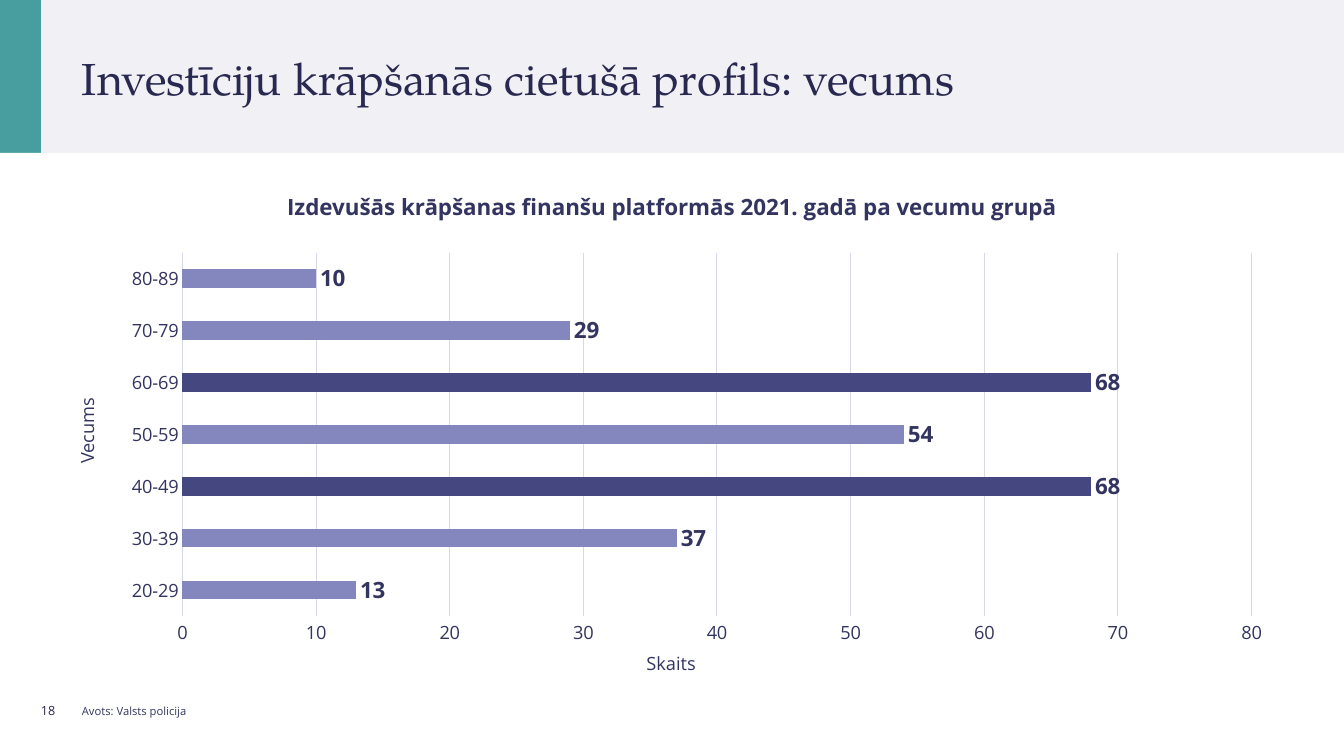
from lxml import etree
from pptx import Presentation
from pptx import util as u
from pptx.chart.data import CategoryChartData
from pptx.dml.color import RGBColor
from pptx.enum import chart as ch, shapes, text
from pptx.oxml.ns import qn

PX = 914400 / 100.8
SANS, SERIF = "Open Sans", "TeX Gyre Pagella"
INK, NAVY, TEAL = "333560", "282850", "489E9E"
BAR, BAR_TOP, GRID = "8487BE", "444780", "D6D7E9"
AGES = ["20-29", "30-39", "40-49", "50-59", "60-69", "70-79", "80-89"]
VICTIMS = [13, 37, 68, 54, 68, 29, 10]


def px(n):
    return u.Emu(round(n * PX))


def rgb(value):
    return RGBColor.from_string(value)


def set_font(font, size, color=INK, name=SANS, bold=False):
    font.size, font.name, font.bold = u.Pt(size), name, bold
    font.color.rgb = rgb(color)


def add_rect(slide, box, color):
    sp = slide.shapes.add_shape(shapes.MSO_SHAPE.RECTANGLE, *map(px, box))
    sp.shadow.inherit = False
    sp.fill.solid()
    sp.fill.fore_color.rgb = rgb(color)
    sp.line.fill.background()


def add_text(slide, box, content, size, color=INK, name=SANS, bold=False,
             align="LEFT", anchor="MIDDLE", rotation=0):
    sp = slide.shapes.add_textbox(*map(px, box))
    sp.rotation = rotation
    tf = sp.text_frame
    tf.word_wrap = True
    tf.vertical_anchor = text.MSO_ANCHOR[anchor]
    p = tf.paragraphs[0]
    p.alignment = text.PP_ALIGN[align]
    r = p.add_run()
    r.text = content
    set_font(r.font, size, color, name, bold)


def header(slide, x, y, w, h):
    # Accent block and slide title
    add_rect(slide, (x, y, 41, h), TEAL)
    add_text(slide, (x + 72, y + 20, w - 140, h - 37),
             "Investīciju krāpšanās cietušā profils: vecums", 32, NAVY, SERIF)


def set_plot_layout(chart, x, y, w, h):
    # Fixed inner plot area, as fractions of the chart
    area = chart._chartSpace.chart.plotArea
    for old in area.findall(qn("c:layout")):
        area.remove(old)
    layout = etree.Element(qn("c:layout"))
    manual = etree.SubElement(layout, qn("c:manualLayout"))
    for tag, val in (("layoutTarget", "inner"), ("xMode", "edge"), ("yMode", "edge"),
                     ("x", x), ("y", y), ("w", w), ("h", h)):
        etree.SubElement(manual, qn("c:" + tag)).set("val", str(val))
    area.insert(0, layout)


def age_chart(slide, x, y, w, h):
    data = CategoryChartData()
    data.categories = AGES
    data.add_series("Skaits", VICTIMS)
    chart = slide.shapes.add_chart(ch.XL_CHART_TYPE.BAR_CLUSTERED,
                                   px(x), px(y), px(w), px(h), data).chart
    set_font(chart.font, 13)
    chart.has_legend = chart.has_title = False
    set_plot_layout(chart, 0.067, 0.009, 0.913, 0.898)

    # Axes
    ages, counts = chart.category_axis, chart.value_axis
    for axis in (ages, counts):
        axis.major_tick_mark = axis.minor_tick_mark = ch.XL_TICK_MARK.NONE
        set_font(axis.tick_labels.font, 13)
    counts.minimum_scale, counts.maximum_scale, counts.major_unit = 0, 80, 10
    counts.has_major_gridlines = True
    counts.format.line.fill.background()
    for line in (ages.format.line, counts.major_gridlines.format.line):
        line.color.rgb = rgb(GRID)
        line.width = u.Pt(0.75)

    # Bars, with the largest groups highlighted
    plot = chart.plots[0]
    plot.gap_width = 182
    plot.vary_by_categories = False
    series = plot.series[0]
    series.format.fill.solid()
    series.format.fill.fore_color.rgb = rgb(BAR)
    for i, count in enumerate(VICTIMS):
        if count == max(VICTIMS):
            fill = series.points[i].format.fill
            fill.solid()
            fill.fore_color.rgb = rgb(BAR_TOP)
    labels = series.data_labels
    labels.show_value = True
    labels.position = ch.XL_LABEL_POSITION.OUTSIDE_END
    set_font(labels.font, 16, bold=True)


def body(slide, x, y, w, h):
    # White panel with chart heading, chart and axis names
    add_rect(slide, (x, y, w, h), "FFFFFF")
    add_text(slide, (x + 72, y + 29, w - 144, 50),
             "Izdevušās krāpšanas finanšu platformās 2021. gadā pa vecumu grupā",
             16, bold=True, align="CENTER")
    age_chart(slide, x + 104, y + 96, 1171, 405)
    for label, left, top, turn in (("Vecums", 34, 262, 270), ("Skaits", 618, 494, 0)):
        add_text(slide, (x + left, y + top, 106, 32), label, 13,
                 align="CENTER", anchor="TOP", rotation=turn)


def footer(slide, x, y):
    # Page number and source
    add_text(slide, (x, y, 53, 40), "18", 9, NAVY)
    add_text(slide, (x + 41, y + 9, 349, 23), "Avots: Valsts policija", 8)


def main():
    prs = Presentation()
    prs.slide_width, prs.slide_height = px(1344), px(756)
    s = prs.slides.add_slide(prs.slide_layouts[6])
    s.background.fill.solid()
    s.background.fill.fore_color.rgb = rgb("F0F0F5")
    header(s, 0, 0, 1344, 153)
    body(s, 0, 153, 1344, 603)
    footer(s, 31, 691)
    prs.save("out.pptx")


if __name__ == "__main__":
    main()
